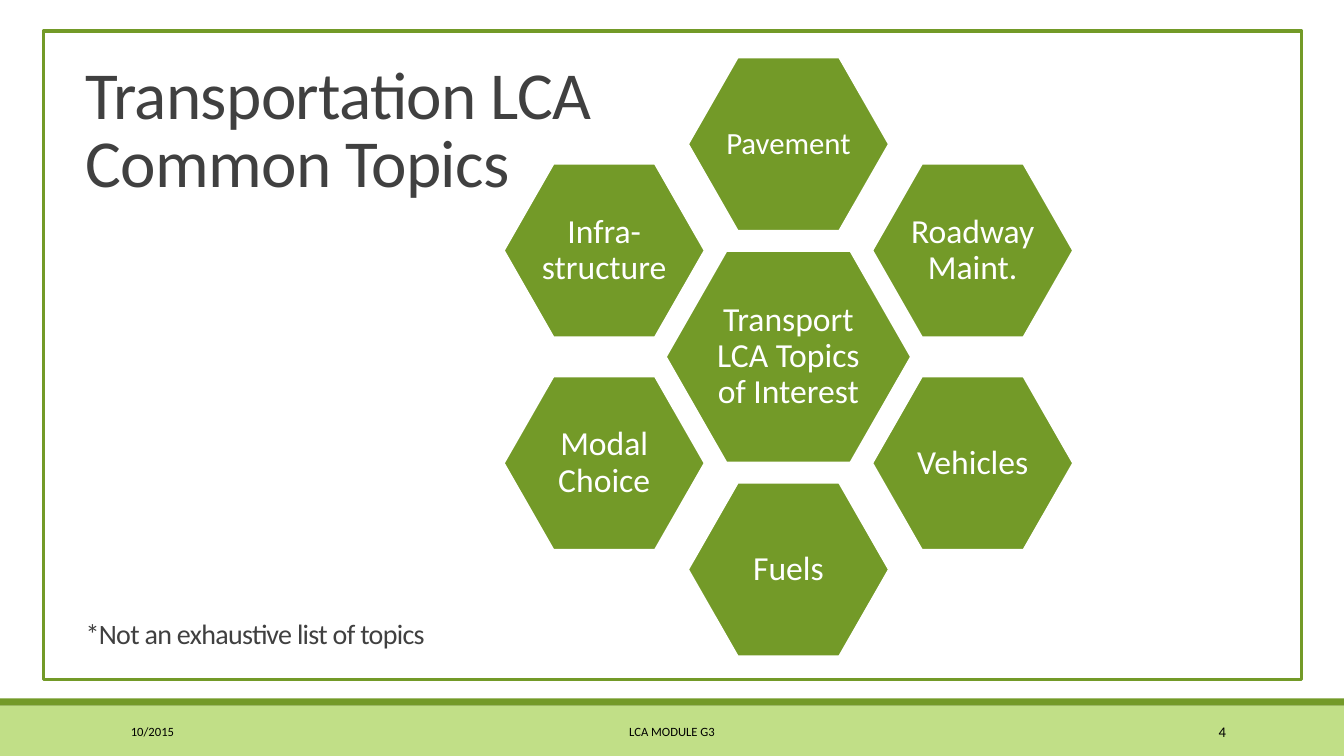
from math import cos, radians, sin

from pptx import Presentation
from pptx.dml.color import RGBColor
from pptx.enum.shapes import MSO_SHAPE
from pptx.enum.text import MSO_ANCHOR, MSO_AUTO_SIZE, PP_ALIGN
from pptx.util import Inches, Pt

GREEN = RGBColor(0x73, 0x9A, 0x28)
PALE = RGBColor(0xC1, 0xDF, 0x87)
GREY = RGBColor(0x40, 0x40, 0x40)
WHITE = RGBColor(0xFF, 0xFF, 0xFF)
BLACK = RGBColor(0, 0, 0)

TITLE = "Transportation LCA\vCommon Topics"
NOTE = "*Not an exhaustive list of topics"
HUB = "Transport LCA Topics of Interest"
TOPICS = [
    ("Pavement", 22),
    ("Roadway Maint.", 24),
    ("Vehicles", 24),
    ("Fuels", 24),
    ("Modal Choice", 24),
    ("Infra-structure", 24),
]
FOOTER = [
    ("10/2015", 1.2, 2.7, 9, PP_ALIGN.LEFT),
    ("LCA MODULE G3", 4.03, 5.27, 9, PP_ALIGN.CENTER),
    ("4", 10.83, 1.43, 10.5, PP_ALIGN.RIGHT),
]
BANDS = [(7, 0.5, PALE), (6.93, 0.07, GREEN)]
CENTER = (7.82, 3.54)
RING = 2.11
HUB_SIZE = (2.43, 2.1)
TOPIC_SIZE = (1.99, 1.72)


def assign(target, values):
    """Set each attribute of the target from a dict."""
    for name, value in values.items():
        setattr(target, name, value)


def write(shape, text, size, color, align, anchor, lines=1.0, track=None):
    """Fill a shape with one formatted paragraph."""
    frame = shape.text_frame
    assign(frame, {"text": text, "word_wrap": True, "vertical_anchor": anchor,
                   "auto_size": MSO_AUTO_SIZE.NONE})
    para = frame.paragraphs[0]
    assign(para, {"alignment": align, "line_spacing": lines})
    for run in para.runs:
        assign(run.font, {"name": "Calibri", "size": Pt(size)})
        run.font.color.rgb = color
        if track is not None:
            run.font._element.set("spc", str(track))


def add_shape(slide, kind, box, fill, line=None, width=1.25):
    """Add a flat shape with an optional fill and line."""
    shape = slide.shapes.add_shape(kind, *map(Inches, box))
    shape.shadow.inherit = False
    if fill is None:
        shape.fill.background()
    else:
        shape.fill.solid()
        shape.fill.fore_color.rgb = fill
    if line is None:
        shape.line.fill.background()
    else:
        shape.line.color.rgb = line
        shape.line.width = Pt(width)
    return shape


def add_hex(slide, text, size, mid, dims):
    """Add a labelled hexagon around its middle point."""
    (x, y), (wide, high) = mid, dims
    box = (x - wide / 2, y - high / 2, wide, high)
    shape = add_shape(slide, MSO_SHAPE.HEXAGON, box, GREEN, WHITE)
    shape.adjustments[0] = 0.286
    sides = ("left", "top", "right", "bottom")
    assign(shape.text_frame, {f"margin_{side}": Inches(0.03) for side in sides})
    write(shape, text, size, WHITE, PP_ALIGN.CENTER, MSO_ANCHOR.MIDDLE, 0.9)


def main():
    """Build the slide and save it."""
    deck = Presentation()
    assign(deck, {"slide_width": Inches(13.33), "slide_height": Inches(7.5)})
    slide = deck.slides.add_slide(deck.slide_layouts[5])

    for top, high, color in BANDS:
        add_shape(slide, MSO_SHAPE.RECTANGLE, (0, top, 13.33, high), color)
    add_shape(slide, MSO_SHAPE.RECTANGLE, (0.43, 0.31, 12.48, 6.43), None, GREEN, 2.5)

    title = slide.shapes.title
    assign(title, {"left": Inches(0.75), "top": Inches(0.3),
                   "width": Inches(11), "height": Inches(1.75)})
    write(title, TITLE, 48, GREY, PP_ALIGN.LEFT, MSO_ANCHOR.BOTTOM, 0.85, -50)

    add_hex(slide, HUB, 24, CENTER, HUB_SIZE)
    for i, (text, size) in enumerate(TOPICS):
        turn = radians(i * 360 / len(TOPICS))
        mid = (CENTER[0] + RING * sin(turn), CENTER[1] - RING * cos(turn))
        add_hex(slide, text, size, mid, TOPIC_SIZE)

    note = slide.shapes.add_textbox(*map(Inches, (0.75, 5.92, 11, 0.58)))
    write(note, NOTE, 20, GREY, PP_ALIGN.LEFT, MSO_ANCHOR.BOTTOM, 0.85, -50)
    for text, left, wide, size, align in FOOTER:
        box = slide.shapes.add_textbox(*map(Inches, (left, 7.06, wide, 0.4)))
        write(box, text, size, BLACK, align, MSO_ANCHOR.MIDDLE)

    deck.save("out.pptx")


if __name__ == "__main__":
    main()
